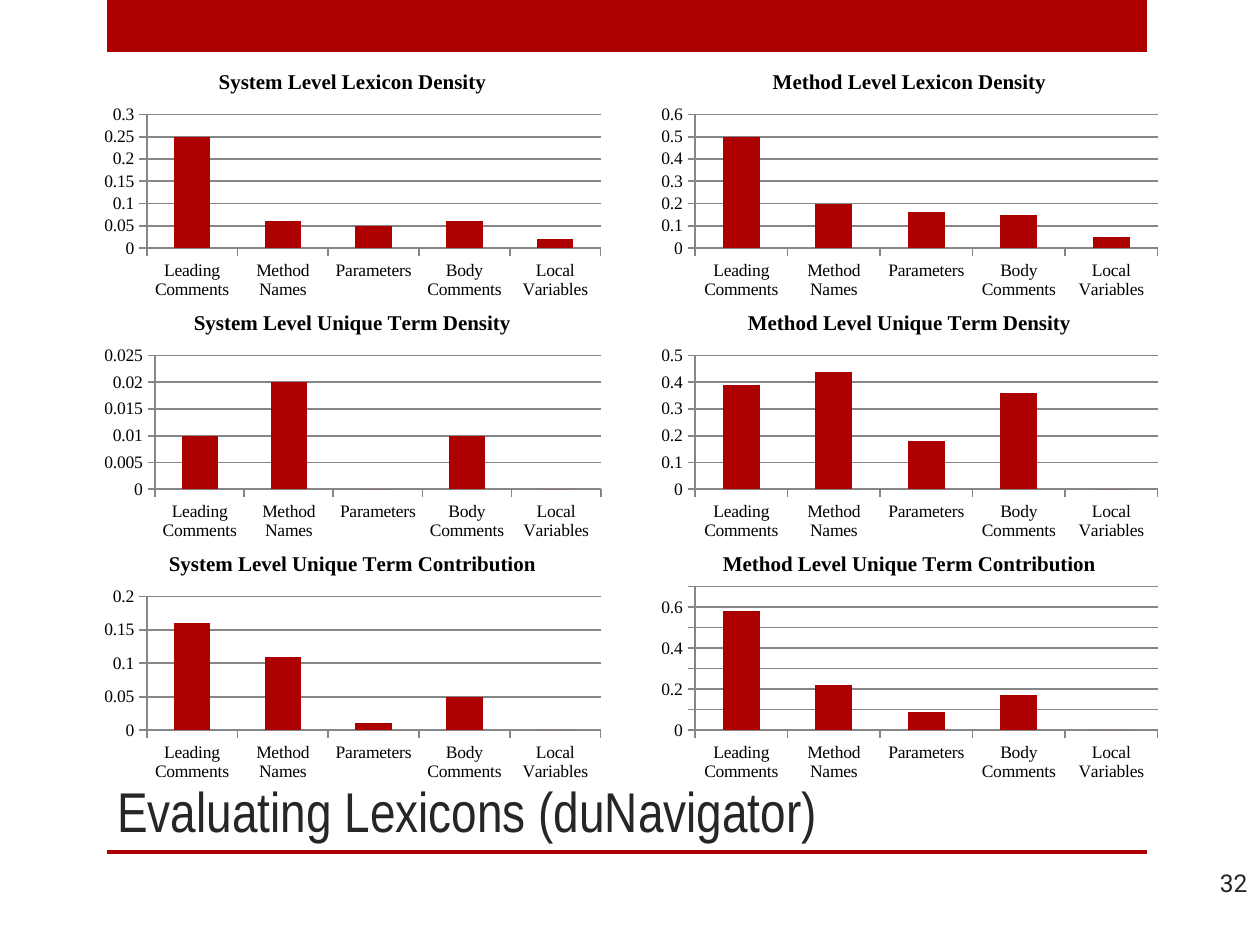
import pptx
import pptx.chart.data
import pptx.dml.color
import pptx.enum.chart
import pptx.enum.shapes
import pptx.enum.text
import pptx.util

PX = 914400 // 126
COLORS = {"red": "AD0101", "heading": "262626", "text": "000000", "grid": "868686"}

HEADING = "Evaluating Lexicons (duNavigator)"
PAGE_NUMBER = "32"
CATEGORIES = ["Leading Comments", "Method Names", "Parameters",
              "Body Comments", "Local Variables"]
# One row of charts per measure: system level on the left, method level on the right
MEASURES = [
    [("System Level Lexicon Density", [0.25, 0.06, 0.05, 0.06, 0.02]),
     ("Method Level Lexicon Density", [0.5, 0.2, 0.16, 0.15, 0.05])],
    [("System Level Unique Term Density", [0.01, 0.02, 0, 0.01, 0]),
     ("Method Level Unique Term Density", [0.39, 0.44, 0.18, 0.36, 0])],
    [("System Level Unique Term Contribution", [0.16, 0.11, 0.01, 0.05, 0]),
     ("Method Level Unique Term Contribution", [0.58, 0.22, 0.09, 0.17, 0])],
]
BANDS = [(107, 0, 1040, 52), (107, 850, 1040, 4)]
CHART_LEFT, CHART_TOP = 94, 53
COLUMN_STEP, ROW_STEP = 557, 241
CHART_WIDTH, CHART_HEIGHT = 517, 252


def emu(*lengths):
    return [length * PX for length in lengths]


def rgb(name):
    return pptx.dml.color.RGBColor.from_string(COLORS[name])


def style_font(font, size, color, face):
    font.size = pptx.util.Pt(size)
    font.color.rgb = rgb(color)
    font.name = face


def add_band(slide, box):
    band = slide.shapes.add_shape(
        pptx.enum.shapes.MSO_SHAPE.RECTANGLE, *emu(*box))
    band.shadow.inherit = False
    band.fill.solid()
    band.fill.fore_color.rgb = rgb("red")
    band.line.fill.background()


def add_text(slide, box, text, size, face, anchor, align):
    frame = slide.shapes.add_textbox(*emu(*box)).text_frame
    frame.word_wrap = True
    frame.vertical_anchor = anchor
    paragraph = frame.paragraphs[0]
    paragraph.text = text
    paragraph.alignment = align
    style_font(paragraph.font, size, "heading", face)


def style_line(line):
    line.color.rgb = rgb("grid")
    line.width = pptx.util.Pt(1)


def add_measure_chart(slide, box, title, values):
    data = pptx.chart.data.CategoryChartData()
    data.categories = CATEGORIES
    data.add_series("Series 1", values)
    chart = slide.shapes.add_chart(
        pptx.enum.chart.XL_CHART_TYPE.COLUMN_CLUSTERED, *emu(*box), data).chart
    style_font(chart.font, 18, "text", "Times New Roman")
    chart.has_legend = False

    chart.has_title = True
    heading = chart.chart_title.text_frame.paragraphs[0]
    heading.text = title
    style_font(heading.font, 12, "text", "Times New Roman")
    heading.font.bold = True
    chart.chart_title.include_in_layout = False

    for axis in (chart.category_axis, chart.value_axis):
        axis.major_tick_mark = pptx.enum.chart.XL_TICK_MARK.OUTSIDE
        style_font(axis.tick_labels.font, 10, "text", "Times New Roman")
        style_line(axis.format.line)
    chart.value_axis.has_major_gridlines = True
    style_line(chart.value_axis.major_gridlines.format.line)

    plot = chart.plots[0]
    plot.gap_width = 150
    plot.vary_by_categories = False
    bars = plot.series[0].format.fill
    bars.solid()
    bars.fore_color.rgb = rgb("red")


def main():
    deck = pptx.Presentation()
    deck.slide_width, deck.slide_height = emu(1260, 945)
    slide = deck.slides.add_slide(deck.slide_layouts[6])

    for band in BANDS:
        add_band(slide, band)
    add_text(slide, (105, 630, 935, 220), HEADING, 32, "Arial Narrow",
             pptx.enum.text.MSO_ANCHOR.BOTTOM, pptx.enum.text.PP_ALIGN.LEFT)
    add_text(slide, (1176, 854, 84, 57), PAGE_NUMBER, 14, "Roboto",
             pptx.enum.text.MSO_ANCHOR.MIDDLE, pptx.enum.text.PP_ALIGN.RIGHT)

    for row, levels in enumerate(MEASURES):
        for column, (title, values) in enumerate(levels):
            box = (CHART_LEFT + column * COLUMN_STEP, CHART_TOP + row * ROW_STEP,
                   CHART_WIDTH, CHART_HEIGHT)
            add_measure_chart(slide, box, title, values)

    deck.save("out.pptx")


if __name__ == "__main__":
    main()
